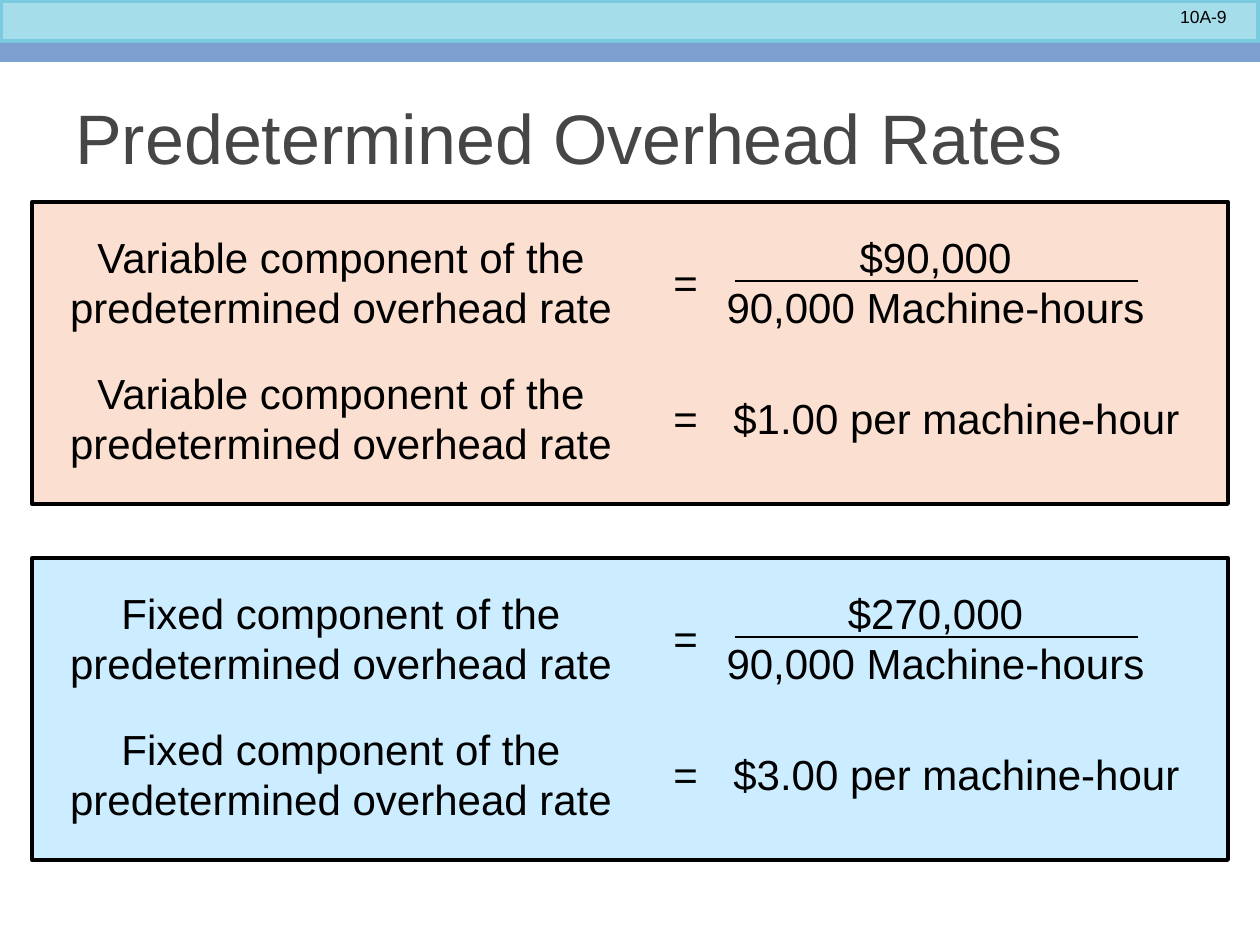
from lxml.etree import SubElement
from pptx import Presentation
from pptx.dml.color import RGBColor
from pptx.enum.shapes import MSO_CONNECTOR, MSO_SHAPE
from pptx.enum.text import MSO_ANCHOR, PP_ALIGN
from pptx.oxml.ns import qn
from pptx.util import Emu, Pt

# Content
TITLE = "Predetermined Overhead Rates"
PAGE = "10A-9"
PANELS = [
    dict(kind="Variable", cost="$90,000", rate="$1.00", fill="peach", top=202),
    dict(kind="Fixed", cost="$270,000", rate="$3.00", fill="sky", top=558),
]
COLORS = dict(aqua="A6DDEA", aqua_edge="7ACBE0", blue="7DA0D0", peach="FBE0D1",
              sky="CCECFF", black="000000", gray="464646")
FONT = "Arial"

# Layout in px, 126 to the inch
SCALE = 914400 / 126
PANEL_LEFT, PANEL_WIDTH, PANEL_HEIGHT = 32, 1196, 302
LABEL_LEFT, LABEL_WIDTH = 57, 568
EQUALS_LEFT, RATE_TAB = 661, 60
FORMULA_TOP, RESULT_TOP = 23, 159


def px(value):
    return Emu(round(value * SCALE))


def color(name):
    return RGBColor.from_string(COLORS[name])


def add_box(left, top, width, height, fill, edge=None, edge_width=0):
    box = slide.shapes.add_shape(MSO_SHAPE.RECTANGLE, px(left), px(top), px(width), px(height))
    box.shadow.inherit = False
    box.fill.solid()
    box.fill.fore_color.rgb = color(fill)
    if edge:
        box.line.color.rgb = color(edge)
        box.line.width = Pt(edge_width)
    else:
        box.line.fill.background()


def add_text(text, left, top, width, height, size=24, align=PP_ALIGN.CENTER,
             ink="black", anchor=MSO_ANCHOR.TOP, wrap=False):
    frame = slide.shapes.add_textbox(px(left), px(top), px(width), px(height)).text_frame
    frame.word_wrap = wrap
    frame.vertical_anchor = anchor
    paragraph = frame.paragraphs[0]
    paragraph.text = text
    paragraph.alignment = align
    for run in paragraph.runs:
        run.font.name = FONT
        run.font.size = Pt(size)
        run.font.color.rgb = color(ink)
    return paragraph


def add_fraction_bar(left, right, y):
    bar = slide.shapes.add_connector(MSO_CONNECTOR.STRAIGHT, px(left), px(y), px(right), px(y))
    bar.line.color.rgb = color("black")
    bar.line.width = Pt(1.5)
    SubElement(bar._element.spPr, qn("a:effectLst"))


def add_panel(kind, cost, rate, fill, top):
    add_box(PANEL_LEFT, top, PANEL_WIDTH, PANEL_HEIGHT, fill, "black", 2.25)
    label = f"{kind} component of the\npredetermined overhead rate"
    for offset in (FORMULA_TOP, RESULT_TOP):
        add_text(label, LABEL_LEFT, top + offset, LABEL_WIDTH, 114)

    # Formula: cost over machine-hours
    add_text("=", EQUALS_LEFT, top + FORMULA_TOP + 25, 50, 63, align=PP_ALIGN.LEFT)
    add_text(f"{cost}\n90,000 Machine-hours", 711, top + FORMULA_TOP, 449, 114)
    add_fraction_bar(735, 1138, top + 79)

    # Result, lined up by a tab stop after the equals sign
    result = add_text(f"=\t{rate} per machine-hour", EQUALS_LEFT, top + RESULT_TOP + 25,
                      537, 63, align=PP_ALIGN.LEFT, wrap=True)
    stops = SubElement(result._p.get_or_add_pPr(), qn("a:tabLst"))
    SubElement(stops, qn("a:tab"), pos=str(px(RATE_TAB)), algn="l")


deck = Presentation()
deck.slide_width, deck.slide_height = px(1260), px(945)
slide = deck.slides.add_slide(deck.slide_layouts[6])

# Header bands, page number and title
add_box(0, 0, 1260, 43, "aqua", "aqua_edge", 4)
add_box(0, 50, 1260, 12, "blue")
add_box(0, 43, 1260, 13, "blue")
add_text(PAGE, 1071, 0, 168, 34, size=10, align=PP_ALIGN.RIGHT, wrap=True)
add_text(TITLE, 63, 63, 1134, 147, size=40, align=PP_ALIGN.LEFT, ink="gray",
         anchor=MSO_ANCHOR.MIDDLE, wrap=True)

# Rate panels
for panel in PANELS:
    add_panel(**panel)

deck.save("out.pptx")
